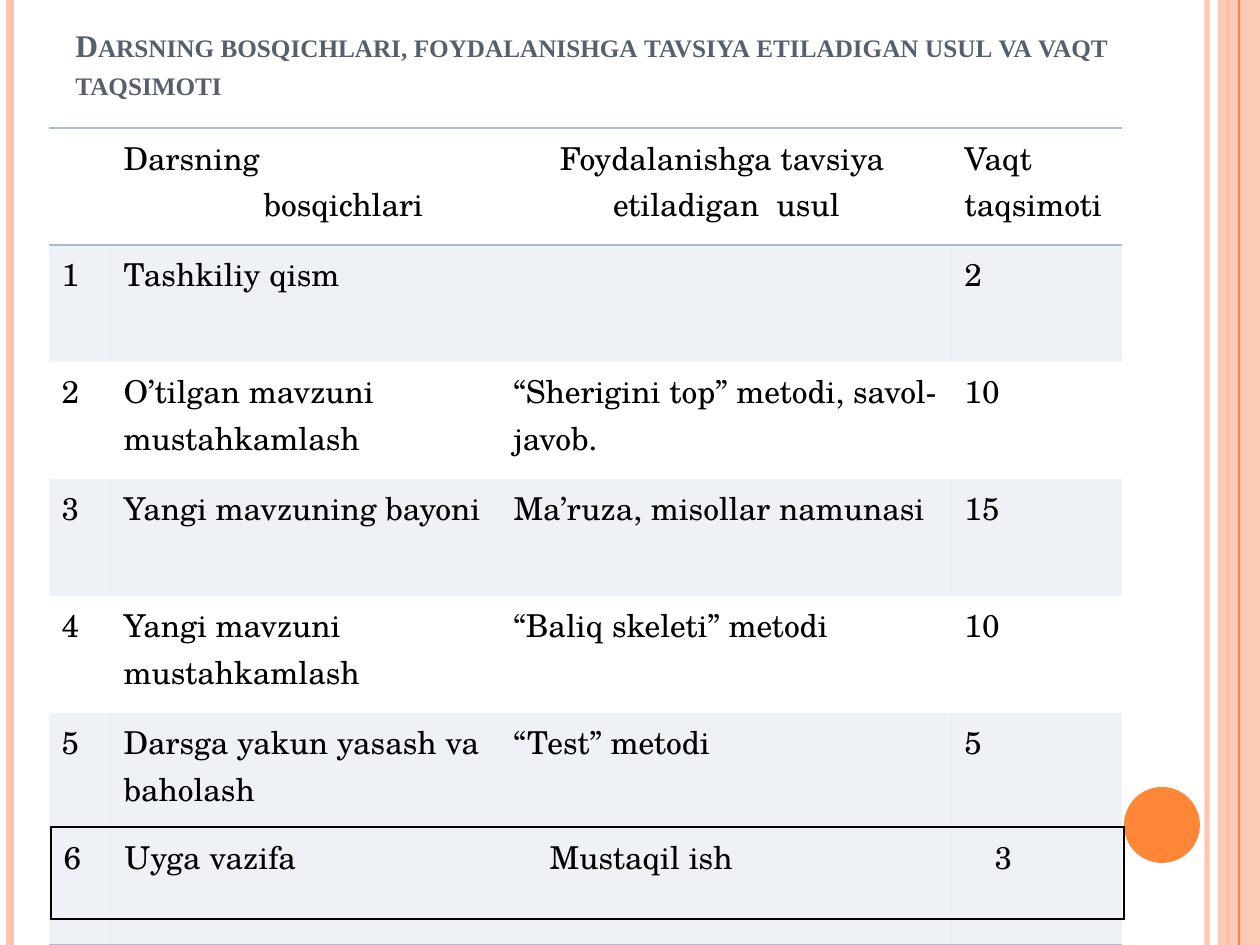
from lxml import etree
from pptx import Presentation
from pptx import util as u
from pptx.dml.color import RGBColor
from pptx.enum import shapes, text
from pptx.oxml.ns import qn

PX = 914400 / 126
COLORS = {"peach": "FEC3AE", "orange": "FE8637", "title": "575F6D",
          "band": "AEBAD5", "black": "000000"}
BODY_FONT = "TeX Gyre Schola"
NO_STYLE = "{2D5ABB26-0587-4C30-8999-92F81FD0307C}"

ROWS = [
    ("", "Darsning\nbosqichlari", "Foydalanishga tavsiya \netiladigan  usul", "Vaqt taqsimoti"),
    ("1", "Tashkiliy qism", "", "2"),
    ("2", "O’tilgan mavzuni mustahkamlash", "“Sherigini top” metodi, savol-javob.", "10"),
    ("3", "Yangi mavzuning bayoni", "Ma’ruza, misollar namunasi", "15"),
    ("4", "Yangi mavzuni mustahkamlash", "“Baliq skeleti” metodi", "10"),
    ("5", "Darsga yakun yasash va baholash", "“Test” metodi", "5"),
]
HOMEWORK = ("6", "Uyga vazifa", "Mustaqil ish", "3")


def px(n):
    return u.Emu(round(n * PX))


def rgb(name):
    return RGBColor.from_string(COLORS[name])


def set_alpha(fill_parent, percent):
    """Make the solid colour found inside an element partly transparent."""
    color = fill_parent.find(".//" + qn("a:srgbClr"))
    etree.SubElement(color, qn("a:alpha"), val=str(percent * 1000))


def add_rule(s, x, height, color, width, alpha=None):
    line = s.shapes.add_connector(shapes.MSO_CONNECTOR.STRAIGHT, px(x), 0, px(x), px(height))
    line.line.color.rgb = rgb(color)
    line.line.width = u.Pt(width)
    sp_pr = line._element.spPr
    etree.SubElement(sp_pr, qn("a:effectLst"))
    if alpha:
        set_alpha(sp_pr, alpha)


def add_solid(s, kind, x, y, w, h, color, alpha=None):
    sp = s.shapes.add_shape(kind, px(x), px(y), px(w), px(h))
    sp.shadow.inherit = False
    sp.fill.solid()
    sp.fill.fore_color.rgb = rgb(color)
    sp.line.fill.background()
    if alpha:
        set_alpha(sp._element.spPr, alpha)


def add_decoration(s, width, height):
    add_rule(s, width - 53, height, "peach", 3, 93)
    add_rule(s, 10, height, "peach", 4.5)
    add_rule(s, width - 32, height, "orange", 1.5)
    add_solid(s, shapes.MSO_SHAPE.RECTANGLE, width - 42, 0, 42, height, "peach", 87)
    add_rule(s, width - 21, height, "orange", 0.75)
    add_solid(s, shapes.MSO_SHAPE.OVAL, width - 136, 787, 76, 76, "orange")


def add_title(s, x, y, w, h):
    tf = s.shapes.add_textbox(px(x), px(y), px(w), px(h)).text_frame
    tf.word_wrap = True
    tf.vertical_anchor = text.MSO_ANCHOR.BOTTOM
    p = tf.paragraphs[0]
    p.text = "Darsning bosqichlari, foydalanishga tavsiya etiladigan usul va vaqt taqsimoti"
    font = p.runs[0].font
    font.name, font.size, font.bold = "Times New Roman", u.Pt(18), True
    font.color.rgb = rgb("title")
    font._element.set("cap", "small")


def set_borders(cell, sides, color):
    """Draw 1 pt borders on sides, given in the order L, R, T, B."""
    tc_pr = cell._tc.get_or_add_tcPr()
    for i, side in enumerate(sides):
        ln = etree.Element(qn("a:ln" + side), w=str(u.Pt(1)))
        fill = etree.SubElement(ln, qn("a:solidFill"))
        etree.SubElement(fill, qn("a:srgbClr"), val=COLORS[color])
        tc_pr.insert(i, ln)


def add_plain_table(s, x, y, col_widths, row_heights):
    frame = s.shapes.add_table(len(row_heights), len(col_widths), px(x), px(y),
                               px(sum(col_widths)), px(sum(row_heights)))
    table = frame.table
    table.first_row = table.horz_banding = False
    table._tbl.tblPr.find(qn("a:tableStyleId")).text = NO_STYLE
    for col, w in zip(table.columns, col_widths):
        col.width = px(w)
    for row, h in zip(table.rows, row_heights):
        row.height = px(h)
    return table


def write_cell(cell, words):
    cell.text = words
    cell.fill.background()
    for p in cell.text_frame.paragraphs:
        p.font.name, p.font.size = BODY_FONT, u.Pt(18)
        p.font.color.rgb = rgb("black")


def add_stages_table(s, x, y):
    table = add_plain_table(s, x, y, [62, 390, 451, 170], [117] * 5 + [232])
    last = len(ROWS) - 1
    for r, row in enumerate(ROWS):
        for c, words in enumerate(row):
            cell = table.cell(r, c)
            write_cell(cell, words)
            if r % 2:
                cell.fill.solid()
                cell.fill.fore_color.rgb = rgb("band")
                set_alpha(cell._tc.tcPr, 20)
            if r in (0, last):
                set_borders(cell, "TB" if r == 0 else "B", "band")
    indented = table.cell(0, 1).text_frame.paragraphs[1]
    indented._p.get_or_add_pPr().set("marL", str(px(140)))
    for p in table.cell(0, 2).text_frame.paragraphs:
        p.alignment = text.PP_ALIGN.CENTER


def add_homework_table(s, x, y):
    cell = add_plain_table(s, x, y, [1073], [92]).cell(0, 0)
    write_cell(cell, "\t".join(HOMEWORK))
    p_pr = cell.text_frame.paragraphs[0]._p.get_or_add_pPr()
    tabs = etree.Element(qn("a:tabLst"))
    for stop in (61, 486, 931):
        etree.SubElement(tabs, qn("a:tab"), pos=str(px(stop)), algn="l")
    p_pr.insert(0, tabs)
    set_borders(cell, "LRTB", "black")


def main():
    prs = Presentation()
    prs.slide_width, prs.slide_height = px(1260), px(945)
    s = prs.slides.add_slide(prs.slide_layouts[6])
    add_decoration(s, 1260, 945)
    add_title(s, 63, 38, 1060, 70)
    add_stages_table(s, 49, 128)
    add_homework_table(s, 51, 827)
    prs.save("out.pptx")


if __name__ == "__main__":
    main()
